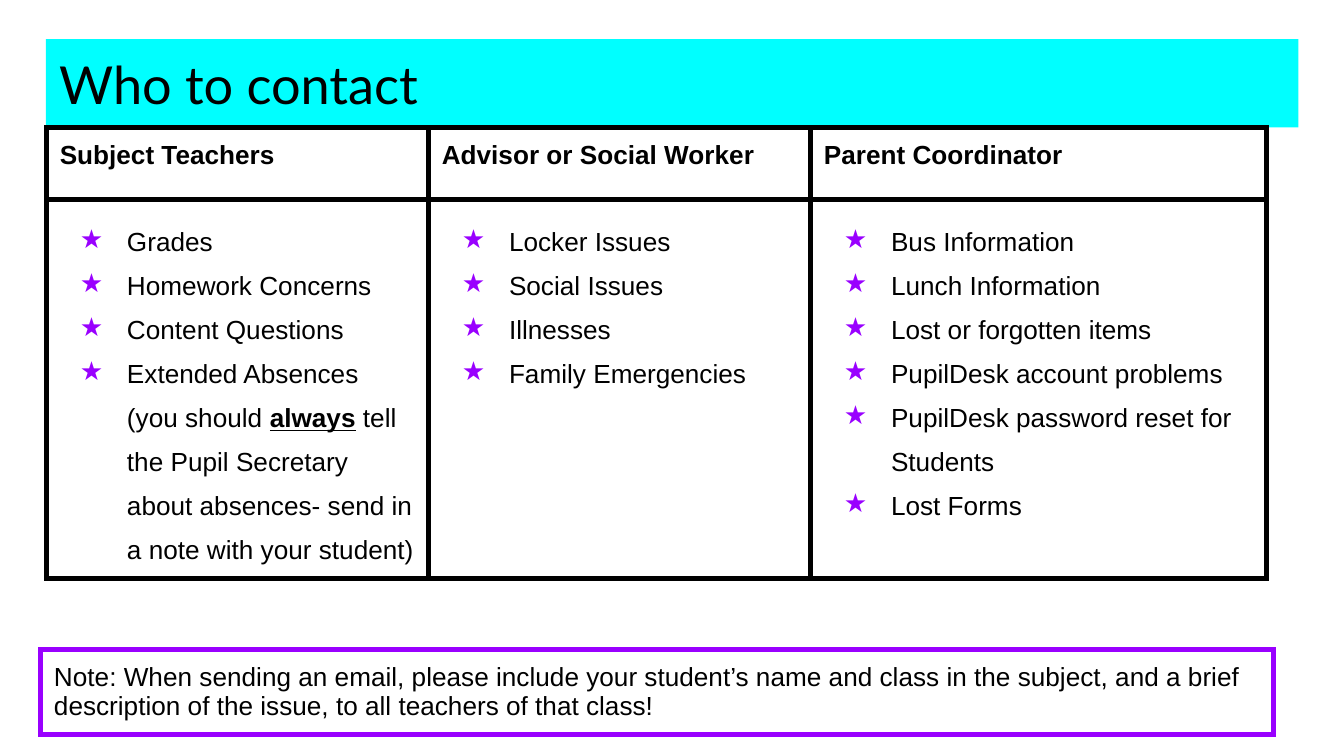
"""Build the "Who to contact" slide: a title band, a contact table and a boxed note."""
from dataclasses import dataclass

from lxml.etree import SubElement as add_element
from pptx import Presentation
from pptx.dml.color import RGBColor as Color
from pptx.enum.shapes import MSO_SHAPE as Shape
from pptx.enum.text import MSO_ANCHOR as Anchor, PP_ALIGN as Align
from pptx.oxml.ns import qn
from pptx.util import Cm, Pt

TITLE = "Who to contact"
CONTACTS = {
    "Subject Teachers": [
        "Grades",
        "Homework Concerns",
        "Content Questions",
        "Extended Absences (you should *always* tell the Pupil Secretary "
        "about absences- send in a note with your student)",
    ],
    "Advisor or Social Worker": [
        "Locker Issues",
        "Social Issues",
        "Illnesses",
        "Family Emergencies",
    ],
    "Parent Coordinator": [
        "Bus Information",
        "Lunch Information",
        "Lost or forgotten items",
        "PupilDesk account problems",
        "PupilDesk password reset for Students",
        "Lost Forms",
    ],
}
NOTE = (
    "Note: When sending an email, please include your student’s name and class in the "
    "subject, and a brief description of the issue, to all teachers of that class!"
)


@dataclass(frozen=True)
class Theme:
    band: str = "00FFFF"
    ink: str = "000000"
    accent: str = "9900FF"
    title_font: str = "Lato"
    body_font: str = "Arial"
    title_size: int = 28
    body_size: int = 14
    border: int = 3


THEME = Theme()
INSET = Cm(0.25)


def set_insets(holder):
    """Give a cell or text frame the same inset on every side."""
    for side in ("left", "top", "right", "bottom"):
        setattr(holder, f"margin_{side}", INSET)


def set_font(font, name, size, bold=False):
    """Apply typeface, size, weight and ink colour."""
    font.name, font.size, font.bold = name, Pt(size), bold
    font.color.rgb = Color.from_string(THEME.ink)


def add_star(para):
    """Give a paragraph a coloured star bullet with a hanging indent."""
    para.line_spacing = 1.5
    properties = para._p.get_or_add_pPr()
    properties.set("marL", str(Cm(1.27)))
    properties.set("indent", str(Cm(-0.89)))
    colour = add_element(properties, qn("a:buClr"))
    add_element(colour, qn("a:srgbClr"), val=THEME.accent)
    add_element(properties, qn("a:buChar"), char="★")


def fill_cell(cell, lines, border, bold=False, starred=False):
    """Border a cell and write its lines, with *marked* words emphasised."""
    set_insets(cell)
    properties = cell._tc.get_or_add_tcPr()
    for side in ("lnL", "lnR", "lnT", "lnB"):
        line = add_element(properties, qn(f"a:{side}"), w=str(Pt(THEME.border)))
        solid = add_element(line, qn("a:solidFill"))
        add_element(solid, qn("a:srgbClr"), val=border)
    cell.fill.background()
    frame = cell.text_frame
    for index, text in enumerate(lines):
        para = frame.add_paragraph() if index else frame.paragraphs[0]
        if starred:
            add_star(para)
        set_font(para.font, THEME.body_font, THEME.body_size, bold)
        for position, part in enumerate(text.split("*")):
            span = para.add_run()
            span.text = part
            if position % 2:
                span.font.bold = span.font.underline = True


def add_grid(page, left, top, widths, heights):
    """Add an unstyled table with the given column widths and row heights."""
    table = page.shapes.add_table(
        len(heights), len(widths), left, top, sum(widths), sum(heights)
    ).table
    table.first_row = table.horz_banding = False
    for column, width in zip(table.columns, widths):
        column.width = width
    for row, height in zip(table.rows, heights):
        row.height = height
    return table


def add_title(page):
    """Add the coloured title band."""
    box = page.shapes.add_shape(Shape.RECTANGLE, Cm(0.87), Cm(0.74), Cm(23.67), Cm(1.67))
    box.shadow.inherit = False
    box.fill.solid()
    box.fill.fore_color.rgb = Color.from_string(THEME.band)
    box.line.fill.background()
    frame = box.text_frame
    frame.word_wrap = True
    frame.vertical_anchor = Anchor.MIDDLE
    set_insets(frame)
    para = frame.paragraphs[0]
    para.text = TITLE
    para.alignment = Align.LEFT
    set_font(para.font, THEME.title_font, THEME.title_size)


def main():
    """Assemble and save the deck."""
    deck = Presentation()
    deck.slide_width, deck.slide_height = Cm(25.4), Cm(14.28)
    page = deck.slides.add_slide(deck.slide_layouts[6])
    add_title(page)

    widths = [Cm(7.22), Cm(7.22), Cm(8.61)]
    contacts = add_grid(page, Cm(0.88), Cm(2.41), widths, [Cm(1.36), Cm(7.12)])
    for column, (heading, topics) in enumerate(CONTACTS.items()):
        fill_cell(contacts.cell(0, column), [heading], THEME.ink, bold=True)
        fill_cell(contacts.cell(1, column), topics, THEME.ink, starred=True)

    note = add_grid(page, Cm(0.77), Cm(12.27), [Cm(23.29)], [Cm(1.07)])
    fill_cell(note.cell(0, 0), [NOTE], THEME.accent)
    deck.save("out.pptx")


if __name__ == "__main__":
    main()
